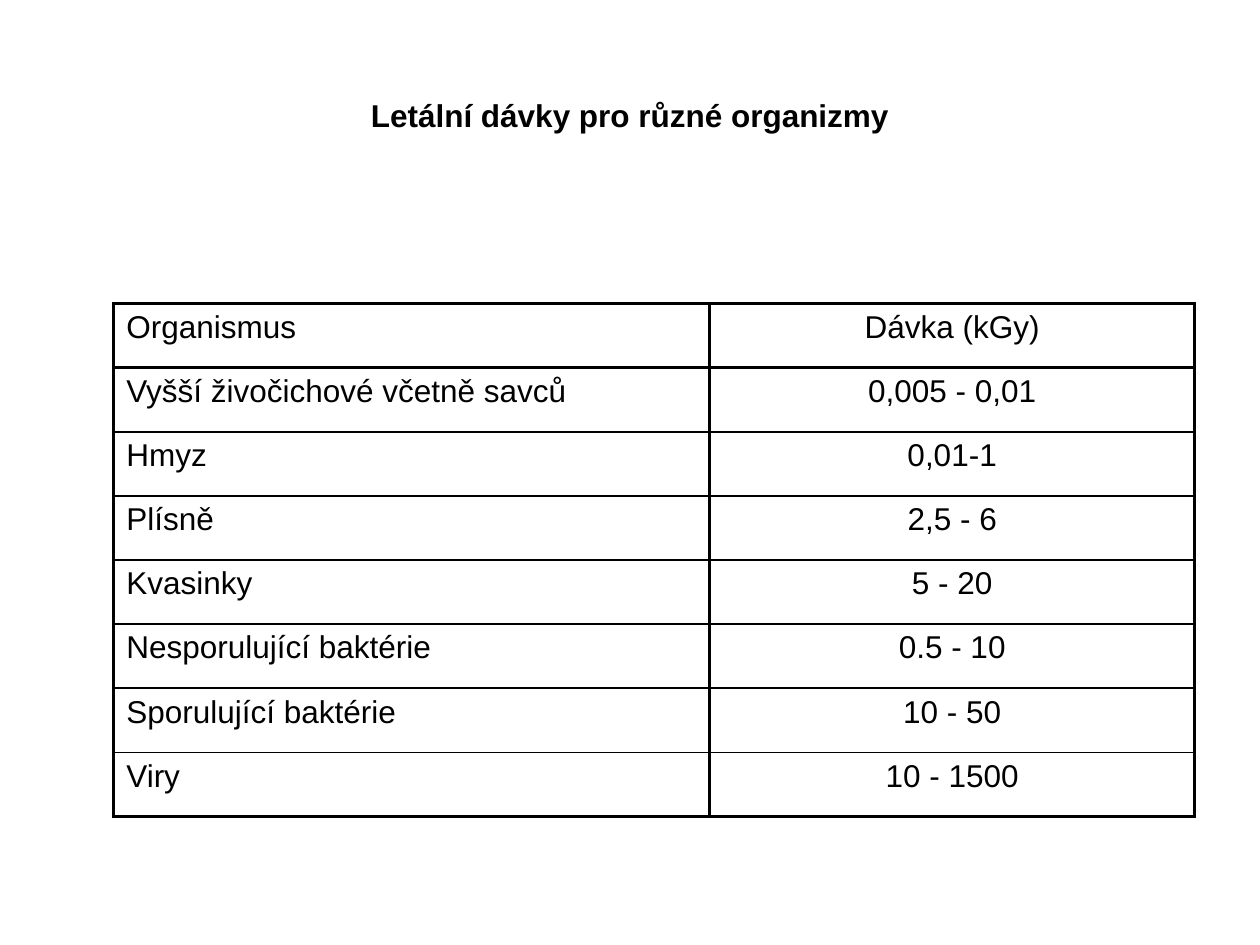
from pptx import Presentation
from pptx.dml.color import RGBColor as RGB
from pptx.enum.text import MSO_ANCHOR as ANCHOR, MSO_AUTO_SIZE as AUTO, PP_ALIGN as ALIGN
from pptx.oxml.ns import qn
from pptx.util import Pt
from lxml.etree import SubElement

COLORS = {"ink": "000000", "paper": "FFFFFF"}
ROWS = [
    ("Organismus", "Dávka (kGy)"),
    ("Vyšší živočichové včetně savců", "0,005 - 0,01"),
    ("Hmyz", "0,01-1"),
    ("Plísně", "2,5 - 6"),
    ("Kvasinky", "5 - 20"),
    ("Nesporulující baktérie", "0.5 - 10"),
    ("Sporulující baktérie", "10 - 50"),
    ("Viry", "10 - 1500"),
]
COL_WIDTHS = [340.5, 277.2]
ROW_HEIGHT = 36.65


def style_text(p, text, align, bold=False):
    p.text = text
    p.alignment = align
    p.font.name = "Arial"
    p.font.size = Pt(18)
    p.font.bold = bold
    p.font.color.rgb = RGB.from_string(COLORS["ink"])


def add_border(cell, side, width):
    ln = SubElement(cell._tc.get_or_add_tcPr(), qn(f"a:{side}"), w=str(Pt(width)))
    fill = SubElement(ln, qn("a:solidFill"))
    SubElement(fill, qn("a:srgbClr"), val=COLORS["ink"])


prs = Presentation()
prs.slide_width, prs.slide_height = Pt(720), Pt(540)
s = prs.slides.add_slide(prs.slide_layouts[6])
s.background.fill.solid()
s.background.fill.fore_color.rgb = RGB.from_string(COLORS["paper"])

# Title
title = s.shapes.add_textbox(Pt(0), Pt(47.5), Pt(720), Pt(36.7))
tf = title.text_frame
tf.word_wrap = True
tf.auto_size = AUTO.SHAPE_TO_FIT_TEXT
tf.vertical_anchor = ANCHOR.MIDDLE
style_text(tf.paragraphs[0], "Letální dávky pro různé organizmy", ALIGN.CENTER, bold=True)

# Dose table
table = s.shapes.add_table(len(ROWS), len(COL_WIDTHS), Pt(65), Pt(173.5),
                           Pt(sum(COL_WIDTHS)), Pt(ROW_HEIGHT * len(ROWS))).table
table.first_row = table.horz_banding = False
for col, width in zip(table.columns, COL_WIDTHS):
    col.width = Pt(width)

last = len(ROWS) - 1
for i, row in enumerate(ROWS):
    table.rows[i].height = Pt(ROW_HEIGHT)
    # Frame and header are heavy, lines between body rows are thin
    top = 2 if i <= 1 else 1
    bottom = 2 if i in (0, last) else 1
    for j, (text, align) in enumerate(zip(row, (ALIGN.JUSTIFY, ALIGN.CENTER))):
        cell = table.cell(i, j)
        style_text(cell.text_frame.paragraphs[0], text, align)
        for side, width in (("lnL", 2), ("lnR", 2), ("lnT", top), ("lnB", bottom)):
            add_border(cell, side, width)
        cell.fill.background()

prs.save("out.pptx")
